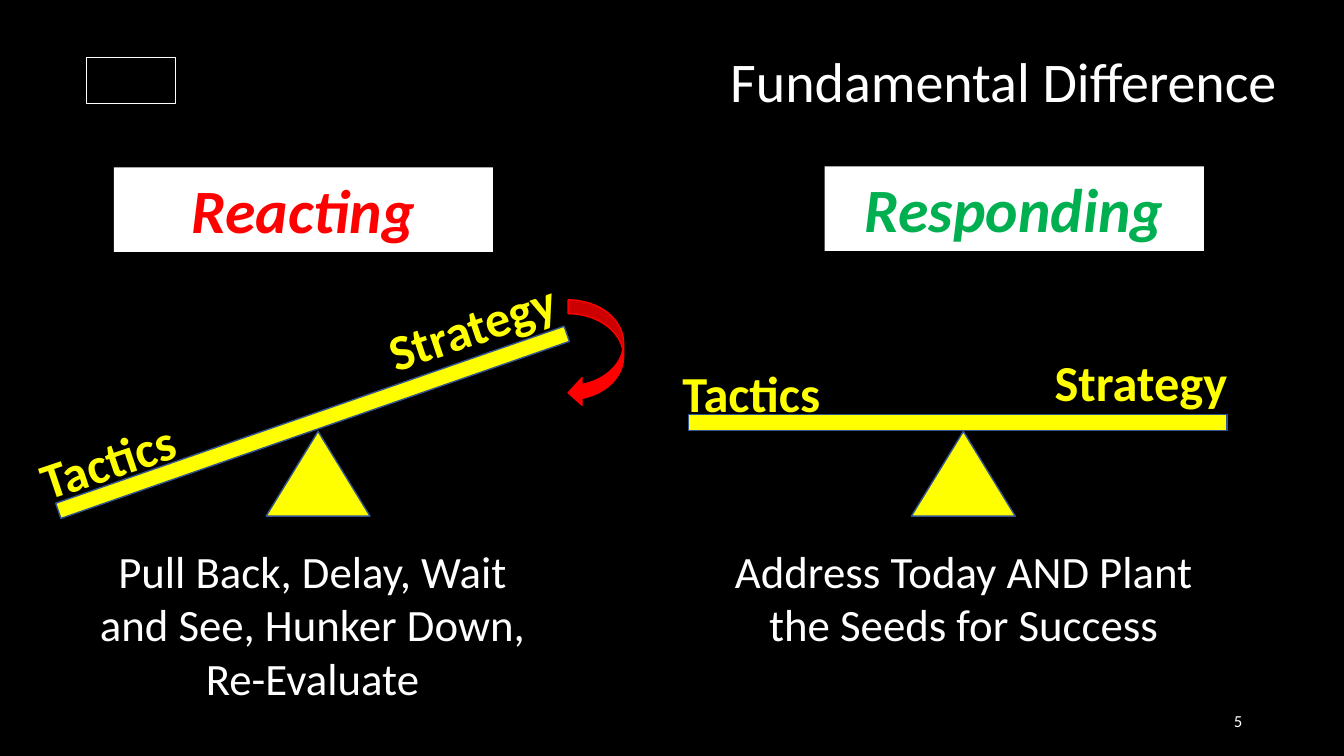
from pptx import Presentation
from pptx import util as u
from pptx.dml.color import RGBColor
from pptx.enum import shapes, text

COLORS = {
    "background": "000000", "white": "FFFFFF", "red": "FF0000",
    "green": "00B050", "yellow": "FFFF00", "outline": "325491",
}
FONT = "Calibri"
LEFT, CENTER, RIGHT = text.PP_ALIGN.LEFT, text.PP_ALIGN.CENTER, text.PP_ALIGN.RIGHT
TOP, MIDDLE, BOTTOM = text.MSO_ANCHOR.TOP, text.MSO_ANCHOR.MIDDLE, text.MSO_ANCHOR.BOTTOM


def color(name):
    """Return the named colour."""
    return RGBColor.from_string(COLORS[name])


def inches(values):
    """Convert numbers to inch lengths."""
    return [u.Inches(value) for value in values]


def write(shape, line, size, color_name, align=CENTER, anchor=TOP,
          bold=False, italic=False, spacing=None):
    """Write one paragraph in a shape."""
    frame = shape.text_frame
    frame.word_wrap = True
    frame.vertical_anchor = anchor
    paragraph = frame.paragraphs[0]
    paragraph.alignment = align
    paragraph.line_spacing = spacing
    run = paragraph.add_run()
    run.text = line
    run.font.name = FONT
    run.font.size = u.Pt(size)
    run.font.bold = bold
    run.font.italic = italic
    run.font.color.rgb = color(color_name)


def add_text(slide, box, line, size, color_name="white", rotation=0, **style):
    """Add a wrapped text box."""
    shape = slide.shapes.add_textbox(*inches(box))
    shape.rotation = rotation
    write(shape, line, size, color_name, **style)


def add_block(slide, kind, box, fill, line=None, rotation=0):
    """Add a filled preset shape without a shadow."""
    shape = slide.shapes.add_shape(kind, *inches(box))
    shape.shadow.inherit = False
    shape.rotation = rotation
    shape.fill.solid()
    shape.fill.fore_color.rgb = color(fill)
    if line:
        shape.line.color.rgb = color(line)
        shape.line.width = u.Pt(1)
    else:
        shape.line.fill.background()
    return shape


def add_heading(slide, box, label, color_name):
    """Place a white plate with a bold italic heading."""
    plate = add_block(slide, shapes.MSO_SHAPE.RECTANGLE, box, "white")
    write(plate, label, 44, color_name, bold=True, italic=True)


def add_seesaw(slide, box, tactics, strategy, beam_tilt=0, label_tilt=0):
    """Place a beam on a pivot, with labels offset from the box corner."""
    left, top, width, height = box
    pivot_width, pivot_height, beam_height = 1.03, 0.84, 0.16
    pivot = (left + 2.21, top + height - pivot_height, pivot_width, pivot_height)
    add_block(slide, shapes.MSO_SHAPE.ISOSCELES_TRIANGLE, pivot, "yellow", "outline")
    add_block(slide, shapes.MSO_SHAPE.RECTANGLE, (left, top, width, beam_height),
              "yellow", "outline", beam_tilt)
    for label, (across, down), align in (("Tactics", tactics, LEFT),
                                         ("Strategy", strategy, RIGHT)):
        add_text(slide, (left + across, top + down, 2.21, 0.71), label, 36,
                 "yellow", label_tilt, align=align, bold=True)


def add_reacting(slide, box):
    """Place the tilted side."""
    left, top, width, height = box
    add_heading(slide, (left + 0.7, top, 3.76, 0.84), "Reacting", "red")
    add_text(slide, (left + 0.31, top + 3.68, 4.72, 1.72),
             "Pull Back, Delay, Wait and See, Hunker Down, Re-Evaluate", 32)
    add_seesaw(slide, (left, top + 2.45, width, 1.01), (-0.16, 0), (3, -1.18),
               340.8, 341.4)
    add_block(slide, shapes.MSO_SHAPE.CURVED_DOWN_ARROW,
              (left + 4.95, top + 1.57, 1.06, 0.55), "red", "red", 90)


def add_responding(slide, box):
    """Place the balanced side."""
    left, top, width, height = box
    add_heading(slide, (left + 1.35, top, 3.76, 0.84), "Responding", "green")
    add_seesaw(slide, (left, top + 2.46, width, 1.01), (-0.16, -0.57), (3.23, -0.68))
    add_text(slide, (left + 0.11, top + 3.69, 5.24, 1.18),
             "Address Today AND Plant the Seeds for Success", 32)


def main():
    """Build and save the slide."""
    presentation = Presentation()
    presentation.slide_width, presentation.slide_height = inches((13.33, 7.5))
    slide = presentation.slides.add_slide(presentation.slide_layouts[6])
    slide.background.fill.solid()
    slide.background.fill.fore_color.rgb = color("background")
    add_block(slide, shapes.MSO_SHAPE.RECTANGLE, (0.86, 0.57, 0.88, 0.46),
              "background", "white")
    add_text(slide, (6.2, 0.32, 6.56, 0.87), "Fundamental Difference", 40,
             align=RIGHT, anchor=BOTTOM, spacing=0.9)
    add_text(slide, (9.42, 6.95, 3, 0.4), "5", 12, align=RIGHT, anchor=MIDDLE)
    add_reacting(slide, (0.43, 1.66, 5.34, 5.4))
    add_responding(slide, (6.83, 1.65, 5.34, 4.87))
    presentation.save("out.pptx")


if __name__ == "__main__":
    main()
